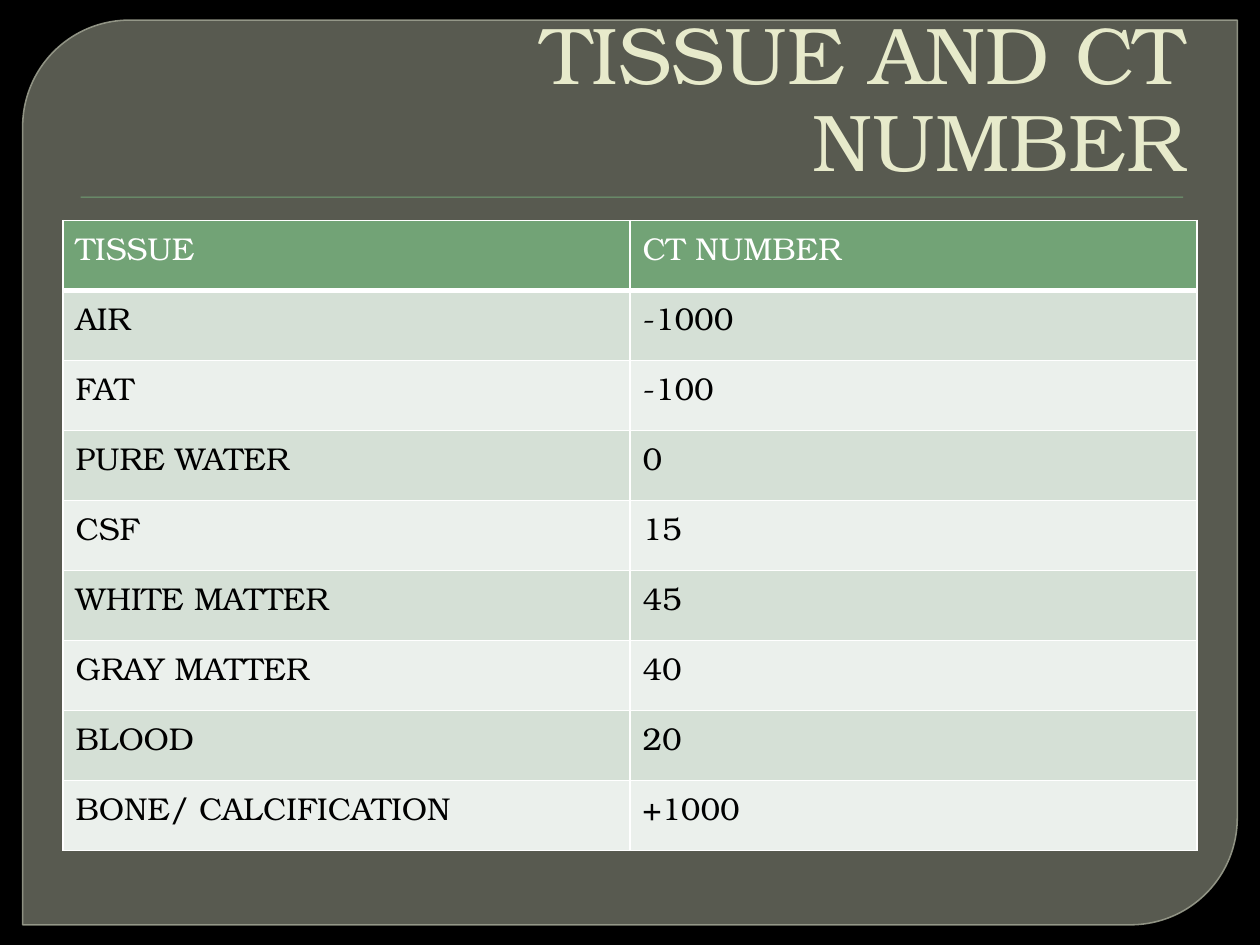
"""Build a slide with a table of tissues and their CT numbers."""
import pptx
import pptx.dml.color
import pptx.enum.shapes
import pptx.enum.text
import pptx.oxml.ns
import pptx.util
from lxml import etree

Inches = pptx.util.Inches
Pt = pptx.util.Pt
RGBColor = pptx.dml.color.RGBColor
qn = pptx.oxml.ns.qn
SHAPES = pptx.enum.shapes.MSO_SHAPE

BLACK = RGBColor(0x00, 0x00, 0x00)
WHITE = RGBColor(0xFF, 0xFF, 0xFF)
OLIVE = RGBColor(0x88, 0x8B, 0x7B)
OUTLINE = RGBColor(0x9D, 0xA0, 0x90)
GREEN = RGBColor(0x72, 0xA3, 0x76)
CREAM = RGBColor(0xE7, 0xEA, 0xCB)
BANDS = [RGBColor(0xEB, 0xF0, 0xEC), RGBColor(0xD5, 0xE0, 0xD6)]
FONT = "TeX Gyre Bonum"
ROWS = [
    ("TISSUE", "CT NUMBER"),
    ("AIR", "-1000"),
    ("FAT", "-100"),
    ("PURE WATER", "0"),
    ("CSF", "15"),
    ("WHITE MATTER", "45"),
    ("GRAY MATTER", "40"),
    ("BLOOD", "20"),
    ("BONE/ CALCIFICATION", "+1000"),
]


def set_opacity(fill, percent):
    color = fill._xPr.find(qn("a:solidFill"))[0]
    etree.SubElement(color, qn("a:alpha"), val=str(percent * 1000))


def add_border(cell, side, points):
    line = etree.SubElement(cell._tc.get_or_add_tcPr(), qn("a:ln" + side), w=str(Pt(points)))
    solid = etree.SubElement(line, qn("a:solidFill"))
    etree.SubElement(solid, qn("a:srgbClr"), val=str(WHITE))


deck = pptx.Presentation()
deck.slide_width = Inches(10)
deck.slide_height = Inches(7.5)
page = deck.slides.add_slide(deck.slide_layouts[6])
page.background.fill.solid()
page.background.fill.fore_color.rgb = BLACK

panel = page.shapes.add_shape(
    SHAPES.ROUND_2_DIAG_RECTANGLE, Inches(0.18), Inches(0.16), Inches(9.64), Inches(7.18)
)
panel.shadow.inherit = False
panel.adjustments[0] = 0.118
panel.adjustments[1] = 0
panel.fill.solid()
panel.fill.fore_color.rgb = OLIVE
set_opacity(panel.fill, 65)
panel.line.color.rgb = OUTLINE
panel.line.width = Pt(0.87)
set_opacity(panel.line.fill, 88)

rule = page.shapes.add_shape(
    SHAPES.RECTANGLE, Inches(0.64), Inches(1.56), Inches(8.75), Inches(0.01)
)
rule.shadow.inherit = False
rule.fill.solid()
rule.fill.fore_color.rgb = GREEN
rule.line.fill.background()

title = page.shapes.add_textbox(Inches(1.67), Inches(0.75), Inches(7.83), Inches(0.8))
title.text_frame.word_wrap = True
title.text_frame.vertical_anchor = pptx.enum.text.MSO_ANCHOR.BOTTOM
title.text_frame.text = "TISSUE AND CT NUMBER"
para = title.text_frame.paragraphs[0]
para.alignment = pptx.enum.text.PP_ALIGN.RIGHT
para.line_spacing = 0.9
para._p.get_or_add_pPr().set("marL", str(Inches(0.06)))
span = para.runs[0]
span.font.name = FONT
span.font.size = Pt(46)
span.font.color.rgb = CREAM

table = page.shapes.add_table(
    len(ROWS), 2, Inches(0.5), Inches(1.75), Inches(9), Inches(5)
).table
for row, values in enumerate(ROWS):
    header = row == 0
    for column, value in enumerate(values):
        cell = table.cell(row, column)
        for side in "LRTB":
            add_border(cell, side, 3 if header and side == "B" else 1)
        cell.fill.solid()
        cell.fill.fore_color.rgb = GREEN if header else BANDS[row % 2]
        cell.text_frame.text = value
        span = cell.text_frame.paragraphs[0].runs[0]
        span.font.name = FONT
        span.font.size = Pt(18)
        span.font.bold = False
        span.font.color.rgb = WHITE if header else BLACK

deck.save("out.pptx")
